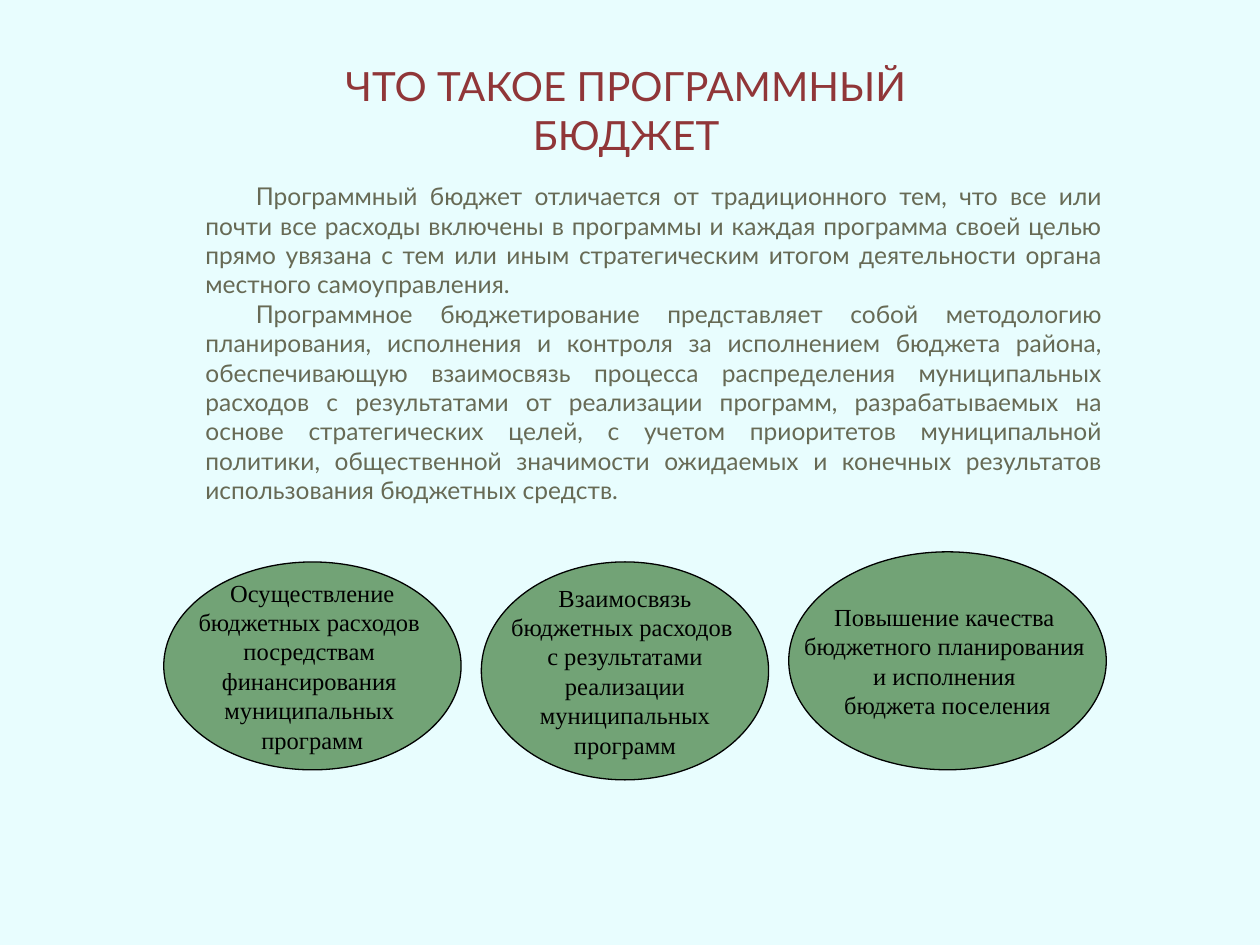
"""Builds a slide that explains the programme budget."""
import pptx
import pptx.dml.color
import pptx.enum.shapes
import pptx.enum.text
import pptx.oxml
import pptx.oxml.ns
import pptx.util

RGBColor = pptx.dml.color.RGBColor
ALIGN = pptx.enum.text.PP_ALIGN

PALE_CYAN = RGBColor(0xE8, 0xFD, 0xFE)
MAROON = RGBColor(0x90, 0x36, 0x38)
OLIVE = RGBColor(0x67, 0x6A, 0x55)
GREEN = RGBColor(0x72, 0xA3, 0x76)
BLACK = RGBColor(0, 0, 0)

COLUMNS, ROWS = 10, 7.5

EXPLANATION = [
    "Программный бюджет отличается от традиционного тем, что все или почти все расходы "
    "включены в программы и каждая программа своей целью прямо увязана с тем или иным "
    "стратегическим итогом деятельности органа местного самоуправления.",
    "Программное бюджетирование представляет собой методологию планирования, исполнения и "
    "контроля за исполнением бюджета района, обеспечивающую взаимосвязь процесса "
    "распределения муниципальных расходов с результатами от реализации программ, "
    "разрабатываемых на основе стратегических целей, с учетом приоритетов муниципальной "
    "политики, общественной значимости ожидаемых и конечных результатов использования "
    "бюджетных средств.",
]
GOALS = [
    ((1.3, 4.46, 2.36, 1.65),
     ["Осуществление\vбюджетных расходов ", "посредствам ", "финансирования ",
      "муниципальных ", "программ"]),
    ((3.82, 4.46, 2.28, 1.73),
     ["Взаимосвязь\vбюджетных расходов ", "с результатами", " реализации ",
      "муниципальных\vпрограмм"]),
    ((6.26, 4.38, 2.52, 1.73),
     ["Повышение качества ", "бюджетного планирования ", "и исполнения ",
      "бюджета поселения"]),
]


def write(frame, paragraphs, *, font, size, color, align=ALIGN.CENTER, indent=0):
    frame.text = "\n".join(paragraphs)
    for paragraph in frame.paragraphs:
        if indent:
            properties = paragraph._p.get_or_add_pPr()
            properties.set("marL", "0")
            properties.set("indent", str(pptx.util.Inches(indent)))
        paragraph.alignment = align
        for run in paragraph.runs:
            run.font.name = font
            run.font.size = pptx.util.Pt(size)
            run.font.bold = False
            run.font.color.rgb = color


class BudgetSlide:
    table_font = "Lato"
    goal_font = "Times New Roman"
    body_size = 14

    def __init__(self, deck):
        self.column = deck.slide_width / COLUMNS
        self.row = deck.slide_height / ROWS
        self.slide = deck.slides.add_slide(deck.slide_layouts[6])
        self.slide.background.fill.solid()
        self.slide.background.fill.fore_color.rgb = PALE_CYAN

    def place(self, left, top, width, height):
        return (round(left * self.column), round(top * self.row),
                round(width * self.column), round(height * self.row))

    def text_table(self, paragraphs, area, **style):
        table = self.slide.shapes.add_table(1, 1, *self.place(*area)).table
        table.first_row = table.horz_banding = False
        cell = table.cell(0, 0)
        borders = cell._tc.get_or_add_tcPr()
        for side in ("lnL", "lnR", "lnT", "lnB"):
            borders.append(pptx.oxml.parse_xml(
                f'<a:{side} {pptx.oxml.ns.nsdecls("a")}><a:noFill/></a:{side}>'))
        cell.fill.background()
        write(cell.text_frame, paragraphs, font=self.table_font, **style)

    def heading(self, text, area):
        self.text_table([text], area, size=23, color=MAROON)

    def explanation(self, paragraphs, area):
        self.text_table(paragraphs, area, size=self.body_size, color=OLIVE,
                        align=ALIGN.JUSTIFY, indent=0.4)

    def goal(self, lines, area):
        oval = self.slide.shapes.add_shape(
            pptx.enum.shapes.MSO_SHAPE.OVAL, *self.place(*area))
        oval.shadow.inherit = False
        oval.fill.solid()
        oval.fill.fore_color.rgb = GREEN
        oval.line.color.rgb = BLACK
        oval.line.width = pptx.util.Pt(0.75)
        oval.text_frame.word_wrap = False
        oval.text_frame.vertical_anchor = pptx.enum.text.MSO_ANCHOR.MIDDLE
        write(oval.text_frame, lines, font=self.goal_font, size=self.body_size, color=BLACK)


def main():
    deck = pptx.Presentation()
    deck.slide_width = pptx.util.Inches(10)
    deck.slide_height = pptx.util.Inches(7.5)
    budget = BudgetSlide(deck)
    budget.heading("ЧТО ТАКОЕ ПРОГРАММНЫЙ БЮДЖЕТ", (1.93, 0.44, 6.08, 0.41))
    budget.explanation(EXPLANATION, (1.53, 1.39, 7.32, 2.88))
    for area, lines in GOALS:
        budget.goal(lines, area)
    deck.save("out.pptx")


if __name__ == "__main__":
    main()
